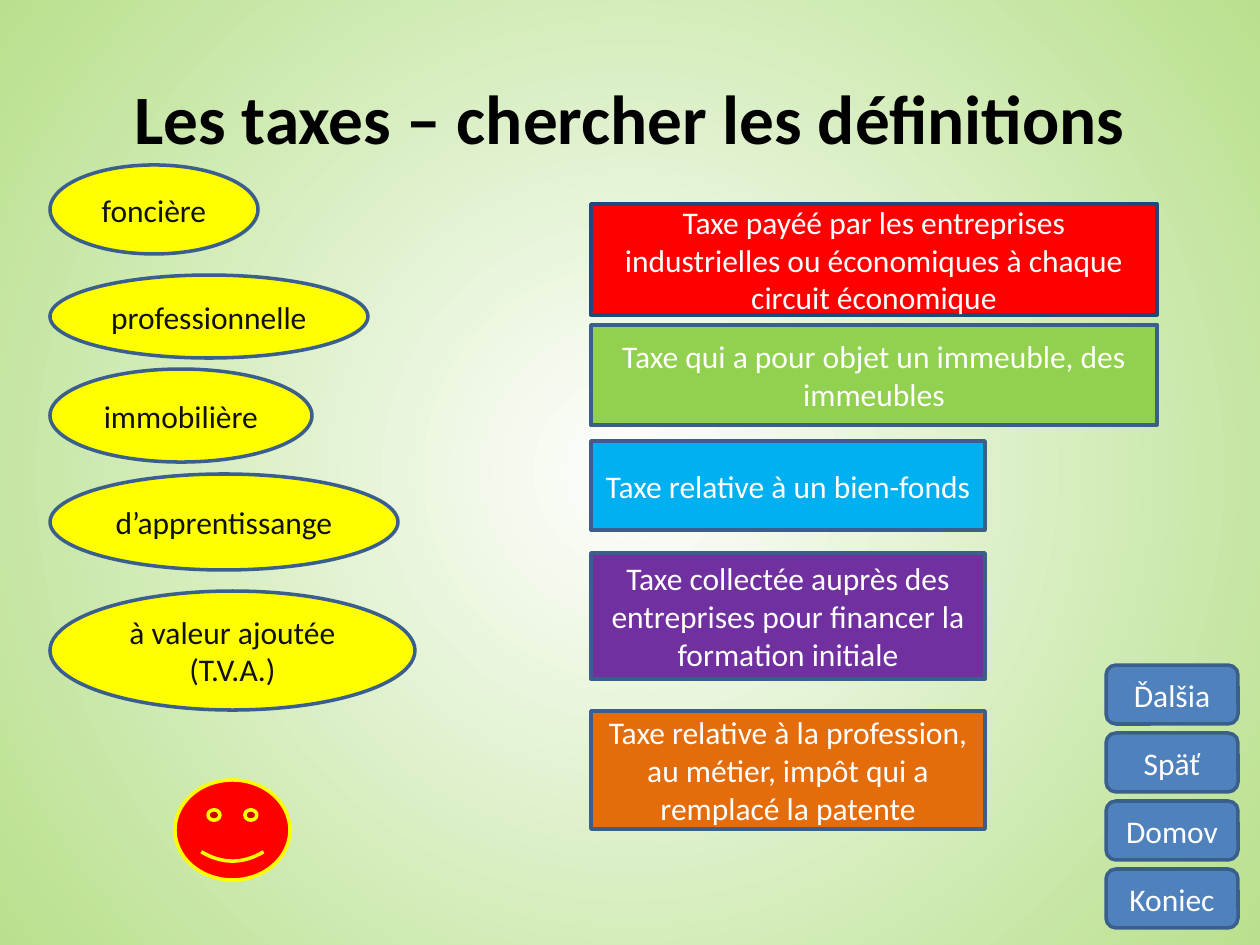
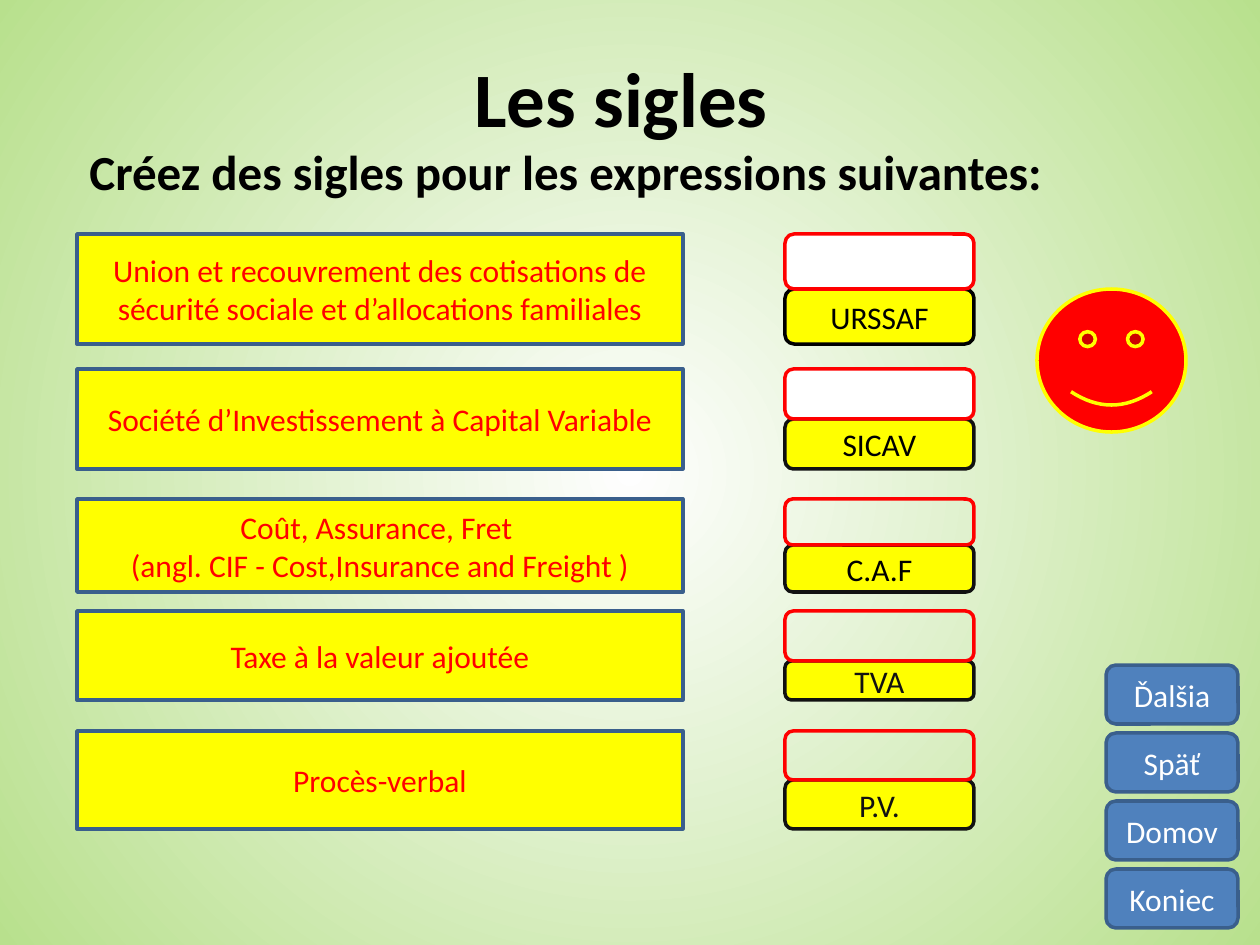
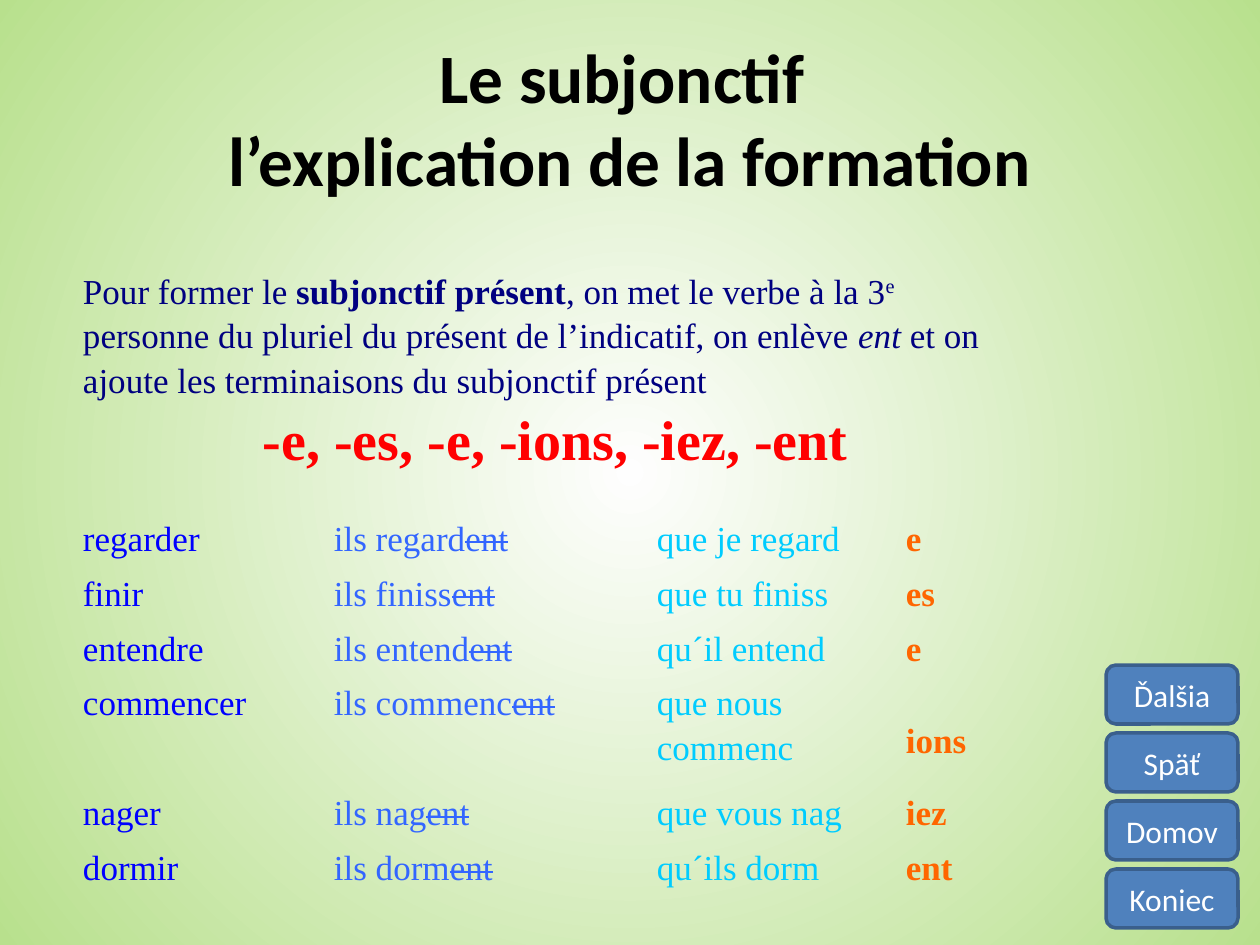
"""Build three French lesson slides: taxes, acronyms and the subjunctive."""
from lxml.etree import SubElement
from pptx import Presentation
from pptx.dml.color import RGBColor
from pptx.enum.shapes import MSO_SHAPE as Shape
from pptx.enum.text import MSO_ANCHOR as Anchor, PP_ALIGN as Align
from pptx.oxml.ns import qn
from pptx.util import Emu, Pt

COLORS = {
    "black": "000000", "ink": "111111", "white": "FFFFFF", "center": "FEFEFE",
    "edge": "B8E08D", "button": "4F81BD", "outline": "3A5F8C", "navy_line": "1F497D",
    "yellow": "FFFF00", "red": "FF0000", "green": "92D050", "sky": "00B0F0",
    "purple": "7030A0", "orange": "E46C0A", "rule": "000080", "verb": "0000FF",
    "present": "3366FF", "subjunctive": "00CCFF", "ending": "FF6600",
}
SANS, SERIF = "Calibri", "Times New Roman"
PX_PER_INCH = 126
NO_TABLE_STYLE = "{2D5ABB26-0587-4C30-8999-92F81FD0307C}"

BUTTONS = ["Ďalšia", "Späť", "Domov", "Koniec"]

TAXES = [
    ("foncière", 165, 208, 89),
    ("professionnelle", 275, 318, 83),
    ("immobilière", 369, 262, 93),
    ("d’apprentissange", 474, 348, 96),
    ("à valeur ajoutée (T.V.A.)", 591, 365, 119),
]
DEFINITIONS = [
    ("Taxe payéé par les entreprises industrielles ou économiques à chaque circuit économique",
     204, 566, 111, "red", "navy_line"),
    ("Taxe qui a pour objet un immeuble, des immeubles", 325, 566, 100, "green", "outline"),
    ("Taxe relative à un bien-fonds", 441, 394, 89, "sky", "outline"),
    ("Taxe collectée auprès des entreprises pour financer la formation initiale",
     553, 394, 126, "purple", "outline"),
    ("Taxe relative à la profession, au métier, impôt qui a remplacé la patente",
     711, 394, 118, "orange", "outline"),
]

ACRONYMS = [
    ("Union et recouvrement des cotisations de sécurité sociale et d’allocations familiales",
     "URSSAF", 234, 110, 55, "white", "black", "black"),
    ("Société d’Investissement à Capital Variable",
     "SICAV", 369, 100, 50, "white", "ink", "black"),
    ("Coût, Assurance, Fret \n(angl. CIF - Cost,Insurance and Freight )",
     "C.A.F", 499, 93, 46, None, "ink", "black"),
    ("Taxe à la valeur ajoutée", "TVA", 611, 89, 50, None, "ink", "ink"),
    ("Procès-verbal", "P.V.", 731, 98, 49, None, "ink", "ink"),
]

RULE = [
    ("Pour former le ", None), ("subjonctif présent", "bold"),
    (", on met le verbe à la 3", None), ("e", "super"),
    (" personne du pluriel du présent de l’indicatif, on enlève ", None),
    ("ent", "italic"),
    (" et on ajoute les terminaisons du subjonctif présent", None),
]
ENDINGS = "‑e, ‑es, ‑e, ‑ions, ‑iez, ‑ent"
VERBS = [
    ("regarder", "ils regard", "que je regard", "e"),
    ("finir", "ils finiss", "que tu finiss", "es"),
    ("entendre", "ils entend", "qu´il entend", "e"),
    ("commencer", "ils commenc", "que nous commenc", "ions"),
    ("nager", "ils nag", "que vous nag", "iez"),
    ("dormir", "ils dorm", "qu´ils dorm", "ent"),
]
COLUMN_WIDTHS = [251, 323, 249, 140]
ROW_HEIGHTS = [63, 247, 55, 55, 55, 110, 55, 55]
LOWERED_ENDING, LOWERED_BY = "ions", 38
RUN_STYLES = {
    "bold": ("b", "1"), "italic": ("i", "1"),
    "super": ("baseline", "30000"), "strike": ("strike", "sngStrike"),
}


def px(length):
    return Emu(round(length * 914400 / PX_PER_INCH))


def rgb(name):
    return RGBColor.from_string(COLORS[name])


def set_font(para, name, size, color, bold=False):
    font = para.font
    font.name, font.size, font.bold = name, Pt(size), bold
    font.color.rgb = rgb(color)


def add_shape(slide, kind, place, fill, line, text="", color="white"):
    shape = slide.shapes.add_shape(kind, *map(px, place))
    shape.shadow.inherit = False
    if fill:
        shape.fill.solid()
        shape.fill.fore_color.rgb = rgb(fill)
    else:
        shape.fill.background()
    shape.line.color.rgb = rgb(line)
    shape.line.width = Pt(2)
    if text:
        frame = shape.text_frame
        frame.word_wrap = True
        frame.text = text
        for para in frame.paragraphs:
            para.alignment = Align.CENTER
            set_font(para, SANS, 18, color)


def add_heading(slide, text, place, size, align=Align.CENTER, wrap=True):
    box = slide.shapes.add_textbox(*map(px, place))
    frame = box.text_frame
    frame.word_wrap = wrap
    frame.vertical_anchor = Anchor.MIDDLE
    frame.text = text
    for para in frame.paragraphs:
        para.alignment = align
        set_font(para, SANS, size, "black", bold=True)


def add_smiley(slide, place):
    add_shape(slide, Shape.SMILEY_FACE, place, "red", "yellow")


def paint_background(master):
    fill = master.background.fill
    fill.gradient()
    for stop, color in zip(fill.gradient_stops, ("center", "edge")):
        stop.color.rgb = rgb(color)
    gradient = master.element.find(".//" + qn("a:gradFill"))
    gradient.remove(gradient.find(qn("a:lin")))
    circle = SubElement(gradient, qn("a:path"), path="circle")
    SubElement(circle, qn("a:fillToRect"), dict.fromkeys("ltrb", "50000"))


def add_slide(deck, title, size, title_height):
    slide = deck.slides.add_slide(deck.slide_layouts[6])
    for index, label in enumerate(BUTTONS):
        add_shape(slide, Shape.ROUNDED_RECTANGLE, (1106, 665 + 68 * index, 132, 59),
                  "button", "outline", label)
    add_heading(slide, title, (63, 38, 1134, title_height), size)
    return slide


def write_runs(para, runs, size, color, bold=False):
    para.line_spacing = 1.15
    set_font(para, SERIF, size, color, bold)
    for text, style in runs:
        run = para.add_run()
        run.text = text
        if style:
            run._r.get_or_add_rPr().set(*RUN_STYLES[style])


def build_taxes(deck):
    slide = add_slide(deck, "Les taxes – chercher les définitions", 39.6, 158)
    for text, top, width, height in TAXES:
        add_shape(slide, Shape.OVAL, (50, top, width, height), "yellow", "outline", text, "ink")
    for text, top, width, height, fill, line in DEFINITIONS:
        add_shape(slide, Shape.RECTANGLE, (591, top, width, height), fill, line, text)
    add_smiley(slide, (175, 780, 115, 100))


def build_acronyms(deck):
    slide = add_slide(deck, "Les sigles ", 44, 117)
    add_heading(slide, "Créez des sigles pour les expressions suivantes:",
                (77, 135, 989, 72), 28, Align.LEFT, wrap=False)
    for phrase, acronym, top, height, blank, blank_fill, line, color in ACRONYMS:
        add_shape(slide, Shape.RECTANGLE, (77, top, 606, height),
                  "yellow", "outline", phrase, "red")
        add_shape(slide, Shape.ROUNDED_RECTANGLE, (785, top + blank, 189, height - blank),
                  "yellow", line, acronym, color)
        add_shape(slide, Shape.ROUNDED_RECTANGLE, (785, top, 189, blank), blank_fill, "red")
    add_smiley(slide, (1037, 289, 149, 143))


def build_subjunctive(deck):
    slide = add_slide(deck, "Le subjonctif \nl’explication de la formation", 39.6, 158)
    place = (74, 204, sum(COLUMN_WIDTHS), sum(ROW_HEIGHTS))
    frame = slide.shapes.add_table(len(ROW_HEIGHTS), len(COLUMN_WIDTHS), *map(px, place))
    frame._element.find(".//" + qn("a:tableStyleId")).text = NO_TABLE_STYLE
    table = frame.table
    table.first_row = table.horz_banding = False
    for column, width in zip(table.columns, COLUMN_WIDTHS):
        column.width = px(width)
    for row, height in zip(table.rows, ROW_HEIGHTS):
        row.height = px(height)
    for cell in table.iter_cells():
        cell.fill.background()
        cell.margin_left = cell.margin_right = px(9)
        cell.margin_top = cell.margin_bottom = 0
    for index in (0, 1):
        table.cell(index, 0).merge(table.cell(index, len(COLUMN_WIDTHS) - 1))

    rule = table.cell(1, 0).text_frame
    write_runs(rule.paragraphs[0], RULE, 20, "rule")
    endings = rule.add_paragraph()
    endings.alignment = Align.CENTER
    write_runs(endings, [(ENDINGS, "bold")], 32, "red", bold=True)

    for index, (verb, present, subjunctive, ending) in enumerate(VERBS, start=2):
        parts = [
            ("verb", [(verb, None)]),
            ("present", [(present, None), ("ent", "strike")]),
            ("subjunctive", [(subjunctive, None)]),
            ("ending", [(ending, "bold")]),
        ]
        for column, (color, runs) in enumerate(parts):
            cell = table.cell(index, column)
            write_runs(cell.text_frame.paragraphs[0], runs, 20, color)
            if runs[0][0] == LOWERED_ENDING:
                cell.margin_top = px(LOWERED_BY)


def main():
    deck = Presentation()
    deck.slide_width, deck.slide_height = px(1260), px(945)
    paint_background(deck.slide_master)
    build_taxes(deck)
    build_acronyms(deck)
    build_subjunctive(deck)
    deck.save("out.pptx")


if __name__ == "__main__":
    main()
